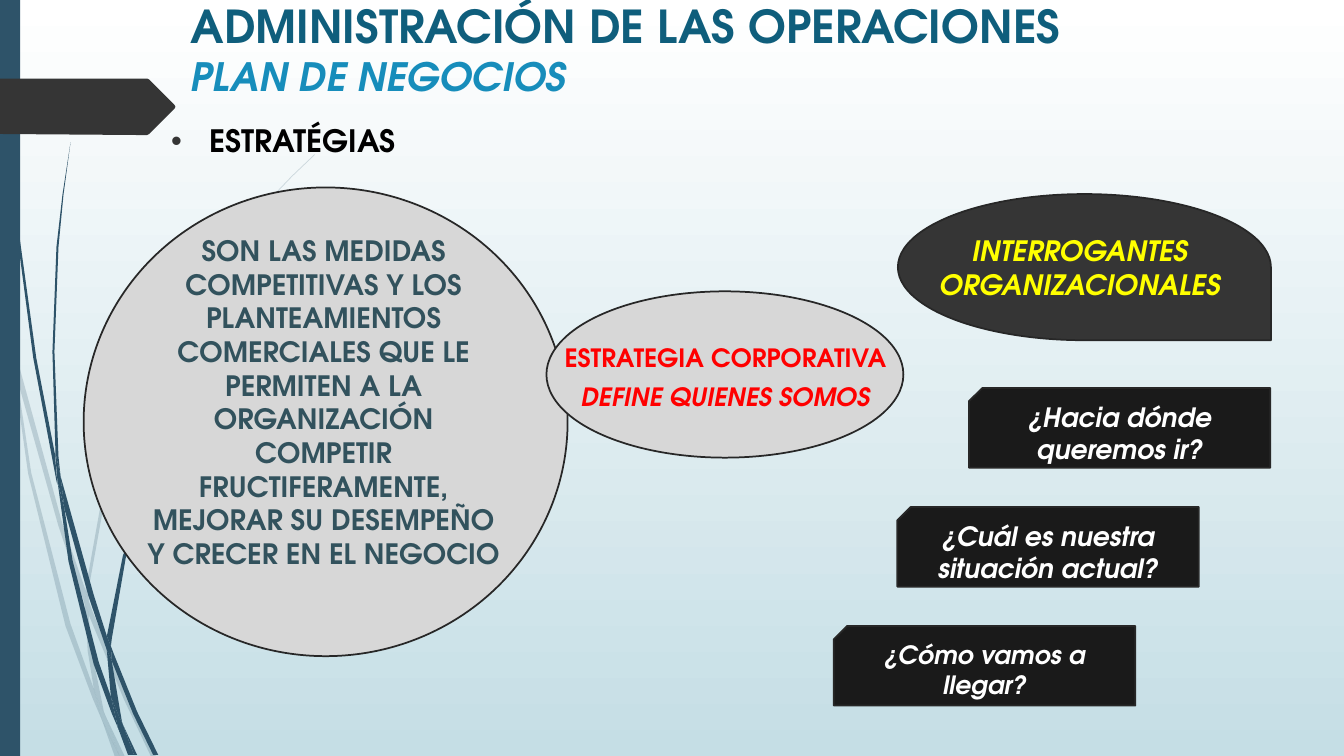
from dataclasses import dataclass

from lxml import etree
from pptx import Presentation
from pptx import util as u
from pptx.dml.color import RGBColor
from pptx.enum import shapes, text
from pptx.oxml import ns

PX = 9144


@dataclass(frozen=True)
class Theme:
    font: str = "TeX Gyre Adventor"
    sky_top: str = "FFFFFF"
    sky_bottom: str = "C5DEE5"
    wisp: str = "2E5369"
    arrow: str = "353535"
    outline: str = "272727"
    oval: str = "D7D7D7"
    card: str = "1A1A1A"
    title: str = "0F5E7C"
    subtitle: str = "178DBB"
    heading: str = "000000"
    definition: str = "32525D"
    highlight: str = "FFFF00"
    corporate: str = "FF0000"
    card_text: str = "FFFFFF"
    title_size: float = 32.4
    subtitle_size: float = 27.9
    heading_size: float = 22
    body_size: float = 20
    question_size: float = 19
    small_size: float = 18
    line_width: float = 1.25


class SlideBuilder:
    def __init__(self, slide, theme):
        self.slide = slide
        self.theme = theme

    def background(self):
        fill = self.slide.background.fill
        fill.gradient()
        fill.gradient_angle = 270
        colors = (self.theme.sky_top, self.theme.sky_bottom)
        for position, (stop, color) in enumerate(zip(fill.gradient_stops, colors)):
            stop.position = position
            stop.color.rgb = RGBColor.from_string(color)

    def paint(self, shape, color, outlined=False):
        shape.shadow.inherit = False
        shape.fill.solid()
        shape.fill.fore_color.rgb = RGBColor.from_string(color)
        if outlined:
            shape.line.color.rgb = RGBColor.from_string(self.theme.outline)
            shape.line.width = u.Pt(self.theme.line_width)
        else:
            shape.line.fill.background()

    def shape(self, kind, box, color, outlined=True, rotation=0, mirrored=False):
        shape = self.slide.shapes.add_shape(kind, *(side * PX for side in box))
        self.paint(shape, color, outlined)
        shape.rotation = rotation
        if mirrored:
            shape.element.spPr.xfrm.set("flipH", "1")

    def outline(self, parent, points, color, alpha=100):
        builder = parent.build_freeform(*points[0], scale=PX)
        builder.add_line_segments(points[1:], close=True)
        shape = builder.convert_to_shape()
        self.paint(shape, color)
        if alpha < 100:
            rgb = shape.element.spPr.find(".//" + ns.qn("a:srgbClr"))
            etree.SubElement(rgb, ns.qn("a:alpha"), val=str(alpha * 1000))

    def wisps(self, strands, alpha=100):
        group = self.slide.shapes.add_group_shape()
        for points in strands:
            self.outline(group.shapes, points, self.theme.wisp, alpha)

    def style(self, run, size, color, italic=False):
        run.font.name = self.theme.font
        run.font.size = u.Pt(size)
        run.font.bold = True
        run.font.italic = italic
        run.font.color.rgb = RGBColor.from_string(color)

    def title(self, box, heading, subtitle):
        title = self.slide.shapes.title
        title.left, title.top, title.width, title.height = (side * PX for side in box)
        frame = title.text_frame
        frame.auto_size = text.MSO_AUTO_SIZE.NONE
        frame.vertical_anchor = text.MSO_ANCHOR.TOP
        paragraph = frame.paragraphs[0]
        paragraph.text = heading + "\v" + subtitle
        paragraph.alignment = text.PP_ALIGN.LEFT
        first, second = paragraph.runs
        self.style(first, self.theme.title_size, self.theme.title)
        self.style(second, self.theme.subtitle_size, self.theme.subtitle, italic=True)

    def words(self, box, lines, size, color, italics=(False,), after=0, bullet=False):
        frame = self.slide.shapes.add_textbox(*(side * PX for side in box)).text_frame
        frame.word_wrap = True
        frame.text = "\n".join(lines)
        for paragraph, italic in zip(frame.paragraphs, italics):
            if bullet:
                self.bullet(paragraph)
            else:
                paragraph.alignment = text.PP_ALIGN.CENTER
            paragraph.space_after = u.Pt(after)
            self.style(paragraph.runs[0], size, color, italic)

    def bullet(self, paragraph):
        properties = paragraph._p.get_or_add_pPr()
        properties.set("marL", str(38 * PX))
        properties.set("indent", str(-38 * PX))
        bullet_color = etree.SubElement(properties, ns.qn("a:buClr"))
        etree.SubElement(bullet_color, ns.qn("a:srgbClr"), val=self.theme.arrow)
        etree.SubElement(properties, ns.qn("a:buFont"), typeface="Arial")
        etree.SubElement(properties, ns.qn("a:buChar"), char="•")


FADED_WISPS = [
    [(11, 350), (9, 322), (0, 282), (0, 299), (10, 344)],
    [(58, 522), (84, 599), (85, 586), (62, 520), (14, 345), (17, 376)],
    [(92, 607), (88, 596), (88, 610), (123, 694), (150, 751), (155, 751), (127, 692)],
    [(119, 751), (124, 751), (105, 711)],
    [(93, 683), (70, 619), (31, 469), (17, 376), (11, 350), (28, 470), (65, 621),
     (92, 693), (101, 714), (99, 707)],
    [(84, 599), (87, 646), (93, 683), (96, 692), (105, 711), (103, 706), (91, 646),
     (88, 610), (88, 608)],
    [(88, 584), (110, 462), (160, 349), (229, 245), (268, 198), (290, 175), (312, 154),
     (312, 153), (289, 175), (268, 197), (228, 244), (158, 348), (107, 461), (85, 584),
     (85, 586), (88, 596)],
    [(101, 714), (114, 751), (119, 751)],
    [(88, 608), (88, 610), (88, 596), (85, 586), (84, 599)],
    [(96, 692), (93, 683), (99, 707), (101, 714), (119, 751), (105, 711)],
]
SOLID_WISPS = [
    [(7, 110), (17, 233), (33, 355), (56, 477), (57, 481), (55, 457), (55, 453),
     (36, 355), (19, 232), (8, 109), (5, 48), (4, 0), (3, 0), (4, 48)],
    [(88, 592), (106, 645), (106, 633), (106, 631), (93, 590), (60, 472), (64, 505)],
    [(113, 649), (110, 641), (111, 656), (132, 708), (152, 749), (157, 749), (136, 706)],
    [(110, 691), (98, 657), (72, 556), (64, 505), (57, 477), (68, 557), (93, 659),
     (111, 708), (117, 722), (116, 717)],
    [(60, 472), (58, 453), (54, 349), (58, 245), (63, 193), (70, 141), (62, 193),
     (56, 245), (52, 349), (55, 449)],
    [(133, 749), (136, 749), (122, 719)],
    [(57, 477), (64, 505), (60, 472), (55, 449), (55, 453)],
    [(111, 633), (125, 552), (158, 476), (205, 406), (231, 374), (245, 359), (261, 344),
     (260, 344), (245, 358), (231, 373), (204, 405), (156, 474), (122, 551), (106, 631),
     (110, 641)],
    [(117, 722), (127, 749), (131, 749)],
    [(106, 645), (110, 691), (116, 706), (122, 719), (121, 716), (111, 656), (109, 651)],
    [(106, 645), (109, 651), (111, 656), (110, 641), (106, 631), (106, 633)],
    [(116, 706), (110, 691), (116, 717), (117, 722), (130, 749), (133, 749), (122, 719)],
]
ARROW = [(0, 78), (146, 78), (148, 79), (173, 104), (174, 106), (173, 108), (148, 133),
         (146, 134), (136, 134), (0, 133)]


def main():
    theme = Theme()
    deck = Presentation()
    deck.slide_width, deck.slide_height = u.Inches(13.33), u.Inches(7.5)
    slide = deck.slides.add_slide(deck.slide_layouts[5])
    page = SlideBuilder(slide, theme)
    kinds = shapes.MSO_SHAPE

    page.background()
    page.wisps(FADED_WISPS, alpha=20)
    page.wisps(SOLID_WISPS)
    page.shape(kinds.RECTANGLE, (0, 0, 20, 750), theme.wisp, outlined=False)
    page.outline(slide.shapes, ARROW, theme.arrow)
    page.title((179, -7, 975, 140), "ADMINISTRACIÓN DE LAS OPERACIONES", "PLAN DE NEGOCIOS")

    page.shape(kinds.OVAL, (83, 186, 480, 465), theme.oval)
    definition = ("SON LAS MEDIDAS COMPETITIVAS Y LOS PLANTEAMIENTOS COMERCIALES QUE LE "
                  "PERMITEN A LA ORGANIZACIÓN COMPETIR FRUCTIFERAMENTE, MEJORAR SU "
                  "DESEMPEÑO Y CRECER EN EL NEGOCIO")
    page.words((135, 227, 372, 347), [definition], theme.body_size, theme.definition)

    page.shape(kinds.TEAR, (1003, 80, 145, 370), theme.arrow, rotation=90)
    page.words((902, 227, 338, 77), ["INTERROGANTES ORGANIZACIONALES"],
               theme.body_size, theme.highlight, italics=(True,))

    questions = [
        (961, "¿Hacia dónde queremos ir?", theme.question_size),
        (890, "¿Cuál es nuestra situación actual?", theme.question_size),
        (827, "¿Cómo vamos a llegar?", theme.small_size),
    ]
    for row, (left, question, size) in enumerate(questions):
        top = 385 + 118 * row
        page.shape(kinds.SNIP_1_RECTANGLE, (left, top, 299, 79), theme.card, mirrored=True)
        page.words((left, top + 8, 299, 74), [question], size, theme.card_text,
                   italics=(True,))

    page.words((160, 116, 1173, 81), ["ESTRATÉGIAS"], theme.heading_size, theme.heading,
               bullet=True)

    page.shape(kinds.OVAL, (542, 289, 354, 165), theme.oval)
    page.words((534, 335, 371, 79), ["ESTRATEGIA CORPORATIVA", "DEFINE QUIENES SOMOS"],
               theme.small_size, theme.corporate, italics=(False, True), after=6)

    deck.save("out.pptx")


if __name__ == "__main__":
    main()
